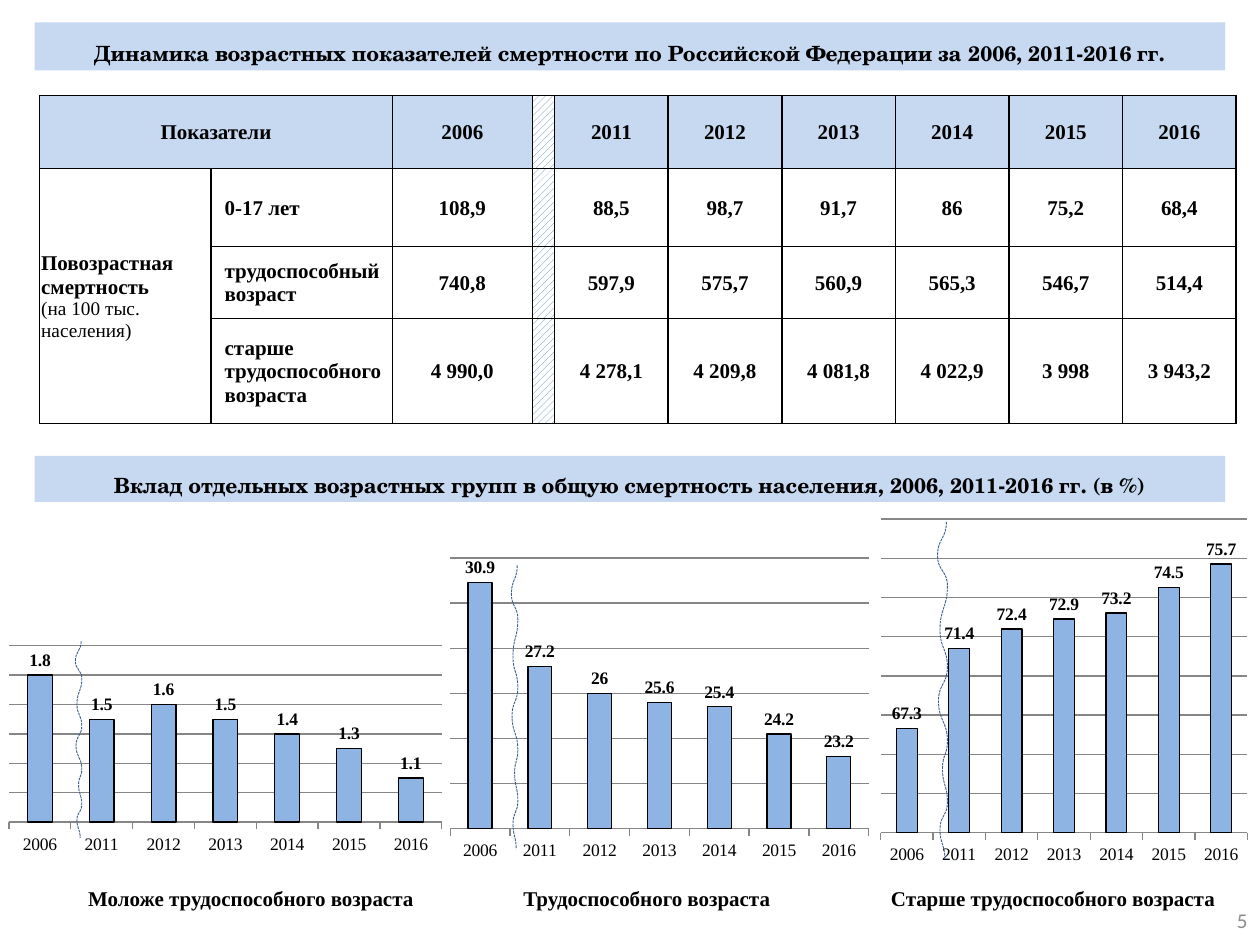
import lxml.etree
import pptx
import pptx.chart.data
import pptx.dml.color
import pptx.enum.chart
import pptx.enum.dml
import pptx.enum.shapes
import pptx.enum.text
import pptx.oxml
import pptx.oxml.ns
import pptx.util

Cm, Pt = pptx.util.Cm, pptx.util.Pt
ALIGN = pptx.enum.text.PP_ALIGN
MIDDLE = pptx.enum.text.MSO_ANCHOR.MIDDLE
SERIF, SCHOOL, SANS = "Times New Roman", "TeX Gyre Schola", "Calibri"
COLORS = {"text": "000000", "band": "C6D9F1", "paper": "FFFFFF", "hatch": "4F81BD",
          "bar": "8EB4E3", "grid": "868686", "wave": "3A5F8C", "page": "8C8C8C"}

TITLE = "Динамика возрастных показателей смертности по Российской Федерации за 2006, 2011-2016 гг."
SUBTITLE = "Вклад отдельных возрастных групп в общую смертность населения, 2006, 2011-2016 гг. (в %)"
YEARS = ["2006", "2011", "2012", "2013", "2014", "2015", "2016"]
GROUP = "Повозрастная смертность\n(на 100 тыс. населения)"
ROWS = [
    ("Показатели", "", YEARS),
    (GROUP, "0-17 лет", ["108,9", "88,5", "98,7", "91,7", "86", "75,2", "68,4"]),
    ("", "трудоспособный возраст",
     ["740,8", "597,9", "575,7", "560,9", "565,3", "546,7", "514,4"]),
    ("", "старше трудоспособного возраста",
     ["4 990,0", "4 278,1", "4 209,8", "4 081,8", "4 022,9", "3 998", "3 943,2"]),
]
HATCH_COL = 3
COL_WIDTHS = [3.45, 3.66, 2.82, 0.45] + [2.29] * 6
ROW_HEIGHTS = [1.47, 1.57, 1.45, 2.12]

# Boxes are left, top, width, height in cm; axis is minimum, maximum, step.
CHARTS = [
    {"name": "Моложе трудоспособного возраста", "box": (0, 12.93, 9.09, 4.39),
     "axis": (0.8, 2, 0.2), "values": [1.8, 1.5, 1.6, 1.5, 1.4, 1.3, 1.1],
     "wave": (1.52, 12.93, 0.13, 3.96), "caption": 1.78},
    {"name": "Трудоспособного возраста", "box": (8.9, 11.12, 8.79, 6.35),
     "axis": (20, 32, 2), "values": [30.9, 27.2, 26, 25.6, 25.4, 24.2, 23.2],
     "wave": (10.31, 11.4, 0.13, 5.72), "caption": 10.55},
    {"name": "Старше трудоспособного возраста", "box": (17.6, 10.32, 7.7, 7.19),
     "axis": (62, 78, 2), "values": [67.3, 71.4, 72.4, 72.9, 73.2, 74.5, 75.7],
     "wave": (18.9, 10.52, 0.2, 6.81), "caption": 17.96},
]
CAPTION_BOX = (0.89, 17.73, 24, 0.76)
WAVE_TURNS = [(0.9, 0), (0, 0.1), (1, 0.19), (0.25, 0.32), (1, 0.43), (0.1, 0.53),
              (1, 0.65), (0.5, 0.73), (1, 0.83), (0.25, 0.91), (0.75, 1)]


def rgb(name):
    return pptx.dml.color.RGBColor.from_string(COLORS[name])


def cm(values):
    return [Cm(v) for v in values]


def set_font(font, size, face, color="text", bold=True):
    font.size, font.name, font.bold = Pt(size), face, bold
    font.color.rgb = rgb(color)


def fill_solid(target, color):
    target.fill.solid()
    target.fill.fore_color.rgb = rgb(color)


def add_xml(parent, tag, **attributes):
    return lxml.etree.SubElement(parent, pptx.oxml.ns.qn(tag), attributes)


def format_banner(sp, text, box):
    sp.left, sp.top, sp.width, sp.height = cm(box)
    fill_solid(sp, "band")
    sp.line.fill.background()
    tf = sp.text_frame
    tf.text = text
    tf.word_wrap, tf.vertical_anchor = True, MIDDLE
    tf.auto_size = pptx.enum.text.MSO_AUTO_SIZE.NONE
    p = tf.paragraphs[0]
    p.alignment, p.line_spacing = ALIGN.CENTER, 1.5
    set_font(p.runs[0].font, 12, SCHOOL)


def set_borders(cell):
    tc_pr = cell._tc.get_or_add_tcPr()
    for i, side in enumerate("LRTB"):
        tc_pr.insert(i, pptx.oxml.parse_xml(
            f'<a:ln{side} {pptx.oxml.ns.nsdecls("a")} w="12700"><a:solidFill>'
            f'<a:srgbClr val="{COLORS["text"]}"/></a:solidFill></a:ln{side}>'))


def format_cell(cell, row, col):
    cell.vertical_anchor = MIDDLE
    cell.margin_left = cell.margin_top = cell.margin_right = Cm(0.03)
    cell.margin_bottom = 0
    if col == HATCH_COL:
        cell.fill.patterned()
        cell.fill.pattern = pptx.enum.dml.MSO_PATTERN.WIDE_UPWARD_DIAGONAL
        cell.fill.fore_color.rgb, cell.fill.back_color.rgb = rgb("hatch"), rgb("paper")
    else:
        fill_solid(cell, "paper" if row else "band")
    set_borders(cell)
    for i, p in enumerate(cell.text_frame.paragraphs):
        p.alignment = ALIGN.CENTER if row == 0 or col > 1 else ALIGN.LEFT
        if row and col == 1:
            p._p.get_or_add_pPr().set("marL", str(Cm(0.25)))
        for r in p.runs:
            set_font(r.font, 11 if i else 12, SERIF, bold=i == 0)


def add_rates_table(s):
    table = s.shapes.add_table(len(ROWS), len(COL_WIDTHS), Cm(0.8), Cm(1.93),
                               Cm(sum(COL_WIDTHS)), Cm(sum(ROW_HEIGHTS))).table
    for column, width in zip(table.columns, COL_WIDTHS):
        column.width = Cm(width)
    for i, (group, age, values) in enumerate(ROWS):
        table.rows[i].height = Cm(ROW_HEIGHTS[i])
        for j, text in enumerate([group, age, values[0], "", *values[1:]]):
            cell = table.cell(i, j)
            cell.text = text
            format_cell(cell, i, j)
    table.cell(0, 0).merge(table.cell(0, 1))
    table.cell(1, 0).merge(table.cell(3, 0))


def set_plot_area(chart, height):
    """Fix the inner plot area, leaving 0.75 cm below it for the years."""
    layout = pptx.oxml.parse_xml(f'<c:layout {pptx.oxml.ns.nsdecls("c")}/>')
    manual = add_xml(layout, "c:manualLayout")
    share = round(0.98 - 0.75 / height, 2)
    for tag, value in [("layoutTarget", "inner"), ("xMode", "edge"), ("yMode", "edge"),
                       ("x", 0.02), ("y", 0.02), ("w", 0.96), ("h", share)]:
        add_xml(manual, f"c:{tag}", val=str(value))
    area = chart._chartSpace.chart.plotArea
    for old in area.findall(pptx.oxml.ns.qn("c:layout")):
        area.remove(old)
    area.insert(0, layout)


def add_share_chart(s, item):
    data = pptx.chart.data.CategoryChartData()
    data.categories = YEARS
    data.add_series("Series 1", item["values"])
    chart = s.shapes.add_chart(pptx.enum.chart.XL_CHART_TYPE.COLUMN_CLUSTERED,
                               *cm(item["box"]), data).chart
    chart.has_legend = chart.has_title = False
    set_font(chart.font, 10, SANS, bold=False)
    axis = chart.value_axis
    axis.minimum_scale, axis.maximum_scale, axis.major_unit = item["axis"]
    axis.visible, axis.has_major_gridlines = False, True
    years = chart.category_axis
    years.major_tick_mark = pptx.enum.chart.XL_TICK_MARK.OUTSIDE
    set_font(years.tick_labels.font, 10, SERIF, bold=False)
    for line in (axis.major_gridlines.format.line, years.format.line):
        line.color.rgb, line.width = rgb("grid"), Pt(0.75)
    plot = chart.plots[0]
    plot.gap_width, plot.vary_by_categories = 150, False
    bars = plot.series[0].format
    fill_solid(bars, "bar")
    bars.line.color.rgb, bars.line.width = rgb("text"), Pt(0.75)
    labels = plot.series[0].data_labels
    labels.show_value = True
    labels.position = pptx.enum.chart.XL_LABEL_POSITION.OUTSIDE_END
    set_font(labels.font, 10, SERIF)
    set_plot_area(chart, item["box"][3])


def round_turns(sp, points):
    """Replace each straight segment by a curve that is upright at both ends."""
    left, top = sp.left, sp.top
    segments = list(sp._element.iter(pptx.oxml.ns.qn("a:lnTo")))
    for segment, (x0, y0), (x1, y1) in zip(segments, points, points[1:]):
        middle = (y0 + y1) // 2
        curve = lxml.etree.Element(pptx.oxml.ns.qn("a:cubicBezTo"))
        for x, y in [(x0, middle), (x1, middle), (x1, y1)]:
            add_xml(curve, "a:pt", x=str(x - left), y=str(y - top))
        segment.getparent().replace(segment, curve)


def add_wave(s, box):
    left, top, width, height = cm(box)
    points = [(round(left + x * width), round(top + y * height)) for x, y in WAVE_TURNS]
    builder = s.shapes.build_freeform(*points[0])
    builder.add_line_segments(points[1:], close=False)
    sp = builder.convert_to_shape()
    round_turns(sp, points)
    sp.shadow.inherit = False
    sp.fill.background()
    sp.line.color.rgb, sp.line.width = rgb("wave"), Pt(0.5)
    sp.line.dash_style = pptx.enum.dml.MSO_LINE.SQUARE_DOT


def add_captions(s):
    tf = s.shapes.add_textbox(*cm(CAPTION_BOX)).text_frame
    tf.word_wrap = True
    start = CHARTS[0]["caption"]
    tf.margin_left = Cm(start - CAPTION_BOX[0])
    p = tf.paragraphs[0]
    p.text = "\t".join(item["name"] for item in CHARTS)
    tabs = add_xml(p._p.get_or_add_pPr(), "a:tabLst")
    for item in CHARTS[1:]:
        add_xml(tabs, "a:tab", pos=str(Cm(item["caption"] - start)), algn="l")
    set_font(p.runs[0].font, 12, SERIF)


def add_page_number(s):
    tf = s.shapes.add_textbox(*cm((19.48, 18.03, 5.92, 1.02))).text_frame
    tf.text = "5"
    tf.word_wrap, tf.vertical_anchor = True, MIDDLE
    tf.paragraphs[0].alignment = ALIGN.RIGHT
    set_font(tf.paragraphs[0].runs[0].font, 12, SANS, "page", False)


def main():
    prs = pptx.Presentation()
    prs.slide_width, prs.slide_height = Cm(25.4), Cm(19.05)
    s = prs.slides.add_slide(prs.slide_layouts[5])
    format_banner(s.shapes.title, TITLE, (0.7, 0.45, 24, 0.97))
    add_rates_table(s)
    band = s.shapes.add_shape(pptx.enum.shapes.MSO_SHAPE.RECTANGLE, 0, 0, 0, 0)
    band.shadow.inherit = False
    format_banner(band, SUBTITLE, (0.7, 9.19, 24, 0.93))
    add_captions(s)
    for item in CHARTS:
        add_share_chart(s, item)
    add_page_number(s)
    for item in CHARTS:
        add_wave(s, item["wave"])
    prs.save("out.pptx")


if __name__ == "__main__":
    main()
